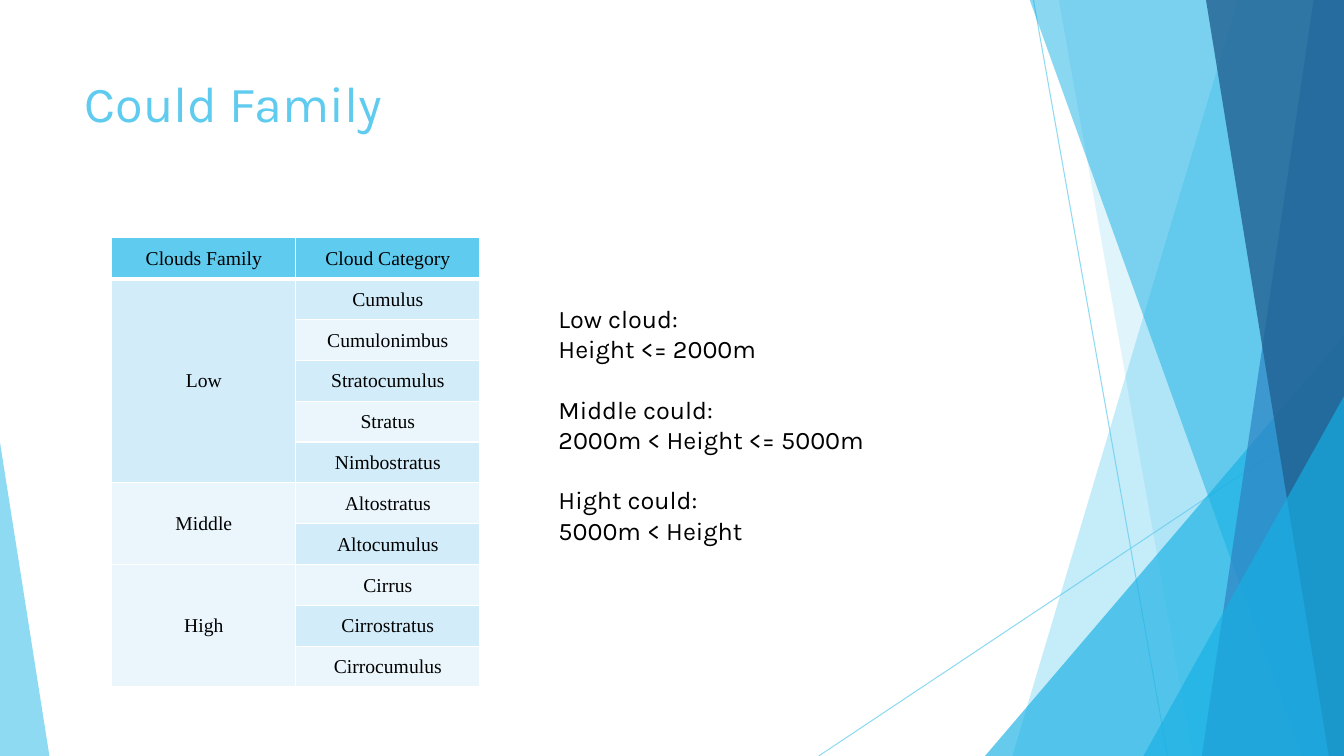
import pptx
import pptx.dml.color
import pptx.enum.shapes
import pptx.enum.text
import pptx.oxml
import pptx.oxml.ns
import pptx.util

Inches = pptx.util.Inches
Pt = pptx.util.Pt
RGBColor = pptx.dml.color.RGBColor
MIDDLE = pptx.enum.text.MSO_ANCHOR.MIDDLE
TOP = pptx.enum.text.MSO_ANCHOR.TOP
LEFT = pptx.enum.text.PP_ALIGN.LEFT
CENTER = pptx.enum.text.PP_ALIGN.CENTER

SKY = RGBColor(0x5F, 0xCB, 0xEF)
CYAN = RGBColor(0x17, 0xB0, 0xE4)
BLUE = RGBColor(0x2E, 0x83, 0xC3)
NAVY = RGBColor(0x22, 0x62, 0x92)
DARK_BAND = RGBColor(0xD2, 0xEC, 0xF9)
LIGHT_BAND = RGBColor(0xEA, 0xF6, 0xFC)
WHITE = RGBColor(0xFF, 0xFF, 0xFF)
BLACK = RGBColor(0, 0, 0)

WIDTH, HEIGHT = 13.33, 7.5
FACET_TOP = -0.01

CLOUD_FAMILIES = {
    "Low": ["Cumulus", "Cumulonimbus", "Stratocumulus", "Stratus", "Nimbostratus"],
    "Middle": ["Altostratus", "Altocumulus"],
    "High": ["Cirrus", "Cirrostratus", "Cirrocumulus"],
}
HEIGHT_RANGES = [
    ("Low cloud:", "Height <= 2000m"),
    ("Middle could:", "2000m < Height <= 5000m"),
    ("Hight could:", "5000m < Height"),
]


def set_opacity(shape, percent):
    for color in shape._element.spPr.iter(pptx.oxml.ns.qn("a:srgbClr")):
        alpha = color.makeelement(pptx.oxml.ns.qn("a:alpha"), {"val": str(percent * 1000)})
        color.append(alpha)


def paint(shape, color, opacity):
    shape.shadow.inherit = False
    shape.fill.solid()
    shape.fill.fore_color.rgb = color
    shape.line.fill.background()
    set_opacity(shape, opacity)


def add_ray(slide, start, end):
    ray = slide.shapes.add_connector(
        pptx.enum.shapes.MSO_CONNECTOR.STRAIGHT, *map(Inches, start + end))
    ray.line.color.rgb = SKY
    ray.line.width = Pt(0.75)
    set_opacity(ray, 70)
    properties = ray._element.spPr
    properties.append(properties.makeelement(pptx.oxml.ns.qn("a:effectLst"), {}))


def add_facet(slide, top_x, bottom_x, color, opacity):
    builder = slide.shapes.build_freeform(Inches(top_x), Inches(FACET_TOP))
    corners = [(WIDTH, FACET_TOP), (WIDTH, HEIGHT), (bottom_x, HEIGHT)]
    builder.add_line_segments([(Inches(x), Inches(y)) for x, y in corners], close=True)
    paint(builder.convert_to_shape(), color, opacity)


def add_corner(slide, left, top, width, apex, color, opacity):
    corner = slide.shapes.add_shape(
        pptx.enum.shapes.MSO_SHAPE.ISOSCELES_TRIANGLE,
        Inches(left), Inches(top), Inches(width), Inches(HEIGHT - top))
    corner.adjustments[0] = apex
    paint(corner, color, opacity)


def add_decoration(slide):
    add_ray(slide, (10.25, 0), (11.58, HEIGHT))
    add_ray(slide, (WIDTH, 4.03), (8.12, HEIGHT))
    add_facet(slide, 12.28, 10.04, SKY, 36)
    add_facet(slide, 10.5, 11.83, SKY, 20)
    add_corner(slide, 9.77, 3.33, 3.56, 1, CYAN, 66)
    add_facet(slide, 10.21, 12.91, CYAN, 50)
    add_facet(slide, 13.03, 11.92, BLUE, 70)
    add_facet(slide, 11.96, 13.18, NAVY, 80)
    add_corner(slide, 11.34, 3.93, 1.99, 1, CYAN, 66)
    add_corner(slide, 0, 4.39, 0.49, 0, SKY, 70)


def style_paragraph(paragraph, font_name, size, color, alignment):
    paragraph.alignment = alignment
    paragraph.font.name = font_name
    paragraph.font.size = Pt(size)
    paragraph.font.color.rgb = color


def set_title(slide, text):
    title = slide.shapes.title
    title.left, title.top = Inches(0.74), Inches(0.67)
    title.width, title.height = Inches(9.4), Inches(1.44)
    frame = title.text_frame
    frame.text = text
    frame.vertical_anchor = TOP
    frame.auto_size = pptx.enum.text.MSO_AUTO_SIZE.NONE
    style_paragraph(frame.paragraphs[0], "Karla", 36, SKY, LEFT)


def set_borders(cell, top, bottom):
    properties = cell._tc.get_or_add_tcPr()
    for side, points in (("L", 1), ("R", 1), ("T", top), ("B", bottom)):
        properties.append(pptx.oxml.parse_xml(
            f'<a:ln{side} {pptx.oxml.ns.nsdecls("a")} w="{Pt(points)}">'
            f'<a:solidFill><a:srgbClr val="{WHITE}"/></a:solidFill></a:ln{side}>'))


def style_cell(cell, row):
    set_borders(cell, 3 if row == 1 else 1, 3 if row == 0 else 1)
    cell.fill.solid()
    band = DARK_BAND if row % 2 else LIGHT_BAND
    cell.fill.fore_color.rgb = SKY if row == 0 else band
    cell.vertical_anchor = MIDDLE
    cell.margin_left = cell.margin_top = cell.margin_right = Inches(0.01)
    cell.margin_bottom = 0
    style_paragraph(cell.text_frame.paragraphs[0], "Times New Roman", 14, BLACK, CENTER)


def add_cloud_table(slide):
    row_count = 1 + sum(map(len, CLOUD_FAMILIES.values()))
    table = slide.shapes.add_table(
        row_count, 2, Inches(1.11), Inches(2.36), Inches(3.65), Inches(4.46)).table
    table.cell(0, 0).text = "Clouds Family"
    table.cell(0, 1).text = "Cloud Category"
    first = 1
    for family, categories in CLOUD_FAMILIES.items():
        table.cell(first, 0).text = family
        for row, category in enumerate(categories, first):
            table.cell(row, 1).text = category
        last = first + len(categories) - 1
        table.cell(first, 0).merge(table.cell(last, 0))
        first = last + 1
    for row in range(row_count):
        for column in range(2):
            style_cell(table.cell(row, column), row)


def add_height_ranges(slide):
    box = slide.shapes.add_textbox(Inches(5.44), Inches(2.36), Inches(3.79), Inches(3.74))
    frame = box.text_frame
    frame.word_wrap = True
    frame.margin_top = Inches(0.65)
    lines = [line for pair in HEIGHT_RANGES for line in pair]
    frame.text = "\n".join(lines)
    for index, paragraph in enumerate(frame.paragraphs):
        style_paragraph(paragraph, "Karla", 18, BLACK, LEFT)
        if index and index % 2 == 0:
            paragraph.space_before = Pt(21.6)


def main():
    presentation = pptx.Presentation()
    presentation.slide_width = Inches(WIDTH)
    presentation.slide_height = Inches(HEIGHT)
    slide = presentation.slides.add_slide(presentation.slide_layouts[5])
    add_decoration(slide)
    set_title(slide, "Could Family")
    add_cloud_table(slide)
    add_height_ranges(slide)
    presentation.save("out.pptx")


if __name__ == "__main__":
    main()
